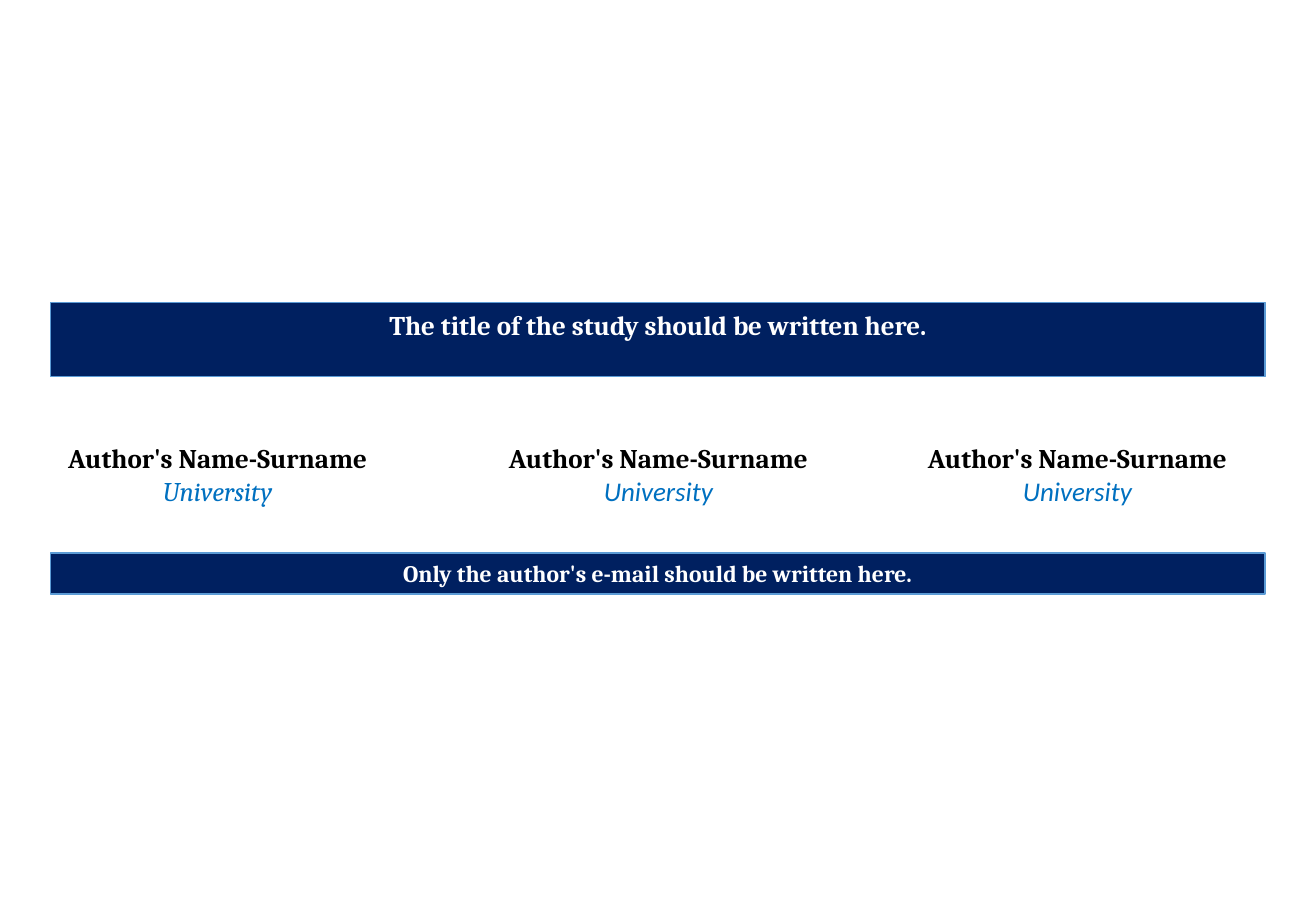
from dataclasses import dataclass

import pptx
import pptx.dml.color
import pptx.enum.shapes
import pptx.enum.text
import pptx.util

Pt = pptx.util.Pt
RGB = pptx.dml.color.RGBColor.from_string


@dataclass(frozen=True)
class Theme:
    navy: str = "002060"
    border: str = "5B9BD5"
    white: str = "FFFFFF"
    black: str = "000000"
    university: str = "0070C0"
    serif: str = "Cambria"
    sans: str = "Calibri"
    large: int = 16
    small: int = 14


THEME = Theme()


def write_line(paragraph, text, color, **formats):
    paragraph.alignment = pptx.enum.text.PP_ALIGN.CENTER
    run = paragraph.add_run()
    run.text = text
    run.font.color.rgb = RGB(color)
    for attribute, value in formats.items():
        setattr(run.font, attribute, value)


def add_banner(slide, box, text, size):
    banner = slide.shapes.add_shape(
        pptx.enum.shapes.MSO_SHAPE.RECTANGLE, *map(Pt, box))
    banner.shadow.inherit = False
    banner.fill.solid()
    banner.fill.fore_color.rgb = RGB(THEME.navy)
    banner.line.color.rgb = RGB(THEME.border)
    banner.line.width = Pt(1)
    frame = banner.text_frame
    frame.word_wrap = True
    frame.vertical_anchor = pptx.enum.text.MSO_ANCHOR.TOP
    write_line(frame.paragraphs[0], text, THEME.white,
               name=THEME.serif, size=Pt(size), bold=True)


def add_author(slide, box, name, university, university_font):
    frame = slide.shapes.add_textbox(*map(Pt, box)).text_frame
    frame.word_wrap = True
    write_line(frame.paragraphs[0], name, THEME.black,
               name=THEME.serif, size=Pt(THEME.large), bold=True)
    write_line(frame.add_paragraph(), university, THEME.university,
               name=university_font, size=Pt(THEME.large), italic=True)


def add_authors(slide, top, height, authors):
    for left, width, university_font in authors:
        add_author(slide, (left, top, width, height),
                   "Author's Name-Surname", "University", university_font)


def main():
    deck = pptx.Presentation()
    deck.slide_width, deck.slide_height = Pt(780), Pt(540)
    slide = deck.slides.add_slide(deck.slide_layouts[6])
    margin, banner_width = 30, 720

    add_banner(slide, (margin, 179.3, banner_width, 44),
               "The title of the study should be written here.", THEME.large)
    add_authors(slide, 258.3, 46, [
        (0, 258, THEME.serif),
        (248.4, 283.6, THEME.sans),
        (496.8, 283.6, THEME.sans),
    ])
    add_banner(slide, (margin, 327.8, banner_width, 24.3),
               "Only the author's e-mail should be written here.", THEME.small)
    deck.save("out.pptx")


if __name__ == "__main__":
    main()
